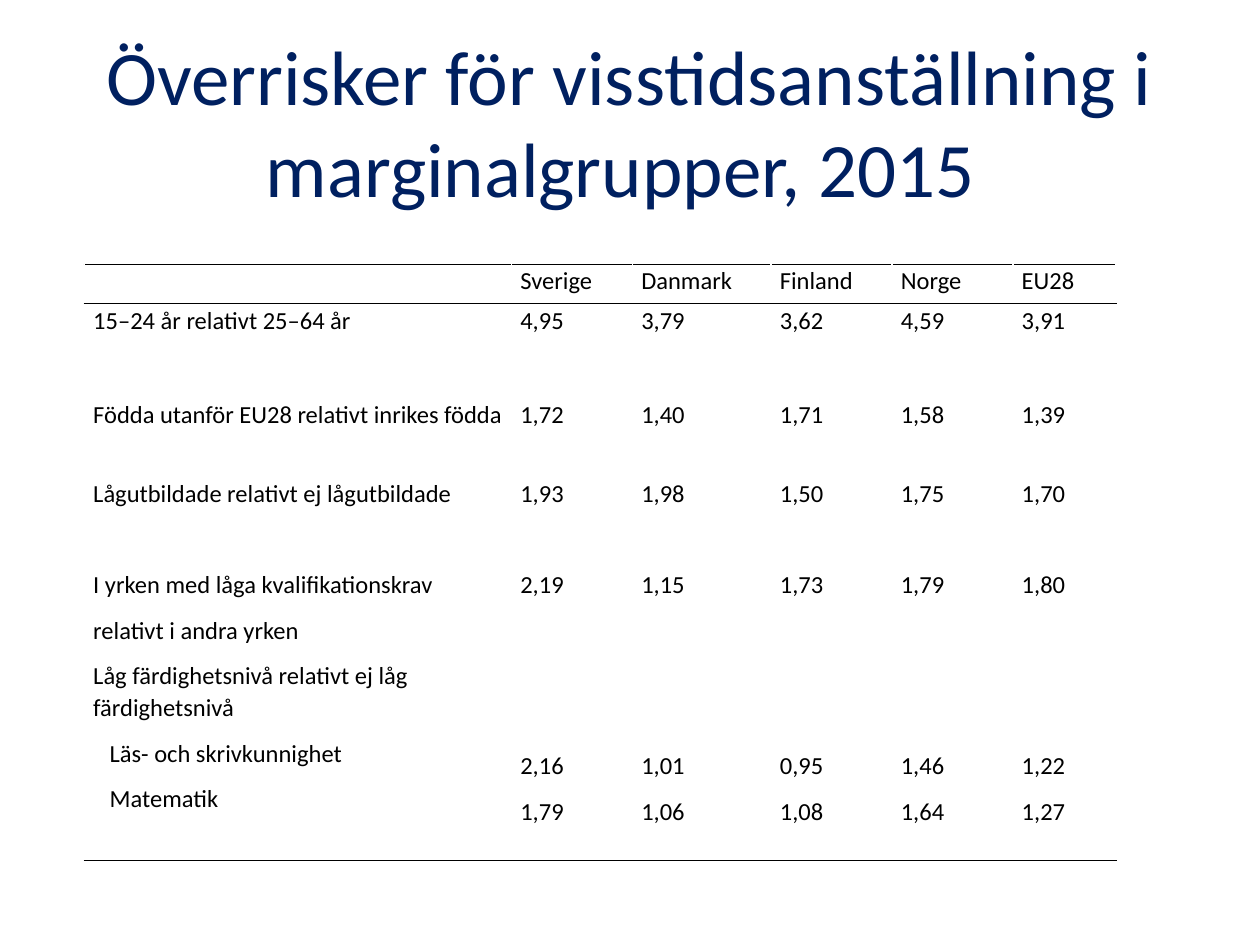
from lxml import etree
from pptx import Presentation
from pptx.dml.color import RGBColor
from pptx.enum.text import MSO_ANCHOR, PP_ALIGN
from pptx.oxml.ns import qn
from pptx.util import Inches, Pt

MIDDLE = MSO_ANCHOR.MIDDLE
CENTER = PP_ALIGN.CENTER
NAVY = RGBColor(0x00, 0x20, 0x60)
BLACK = RGBColor(0x00, 0x00, 0x00)
FONT = "Calibri"

COLUMN_WIDTHS = [3.39, 0.96, 1.1, 0.96, 0.96, 0.82]
ROW_HEIGHTS = [0.31, 0.75, 0.63, 0.72, 0.72, 1.6]
SKILL_INDENT = Inches(0.13)
SKILL_VALUES_TOP = Inches(0.72)

# Each cell is a list of paragraphs.
ROWS = [
    [[], ["Sverige"], ["Danmark"], ["Finland"], ["Norge"], ["EU28"]],
    [["15–24 år relativt 25–64 år"],
     ["4,95"], ["3,79"], ["3,62"], ["4,59"], ["3,91"]],
    [["Födda utanför EU28 relativt inrikes födda"],
     ["1,72"], ["1,40"], ["1,71"], ["1,58"], ["1,39"]],
    [["Lågutbildade relativt ej lågutbildade"],
     ["1,93"], ["1,98"], ["1,50"], ["1,75"], ["1,70"]],
    [["I yrken med låga kvalifikationskrav", "relativt i andra yrken"],
     ["2,19"], ["1,15"], ["1,73"], ["1,79"], ["1,80"]],
    [["Låg färdighetsnivå relativt ej låg färdighetsnivå",
      "Läs- och skrivkunnighet", "Matematik"],
     ["2,16", "1,79"], ["1,01", "1,06"], ["0,95", "1,08"],
     ["1,46", "1,64"], ["1,22", "1,27"]],
]
LAST_ROW = len(ROWS) - 1
BORDERS = {0: ["a:lnT", "a:lnB"], 1: ["a:lnT"], LAST_ROW: ["a:lnB"]}


def add_run(paragraph, text, size, color):
    run = paragraph.add_run()
    run.text = text
    run.font.name = FONT
    run.font.size = Pt(size)
    run.font.color.rgb = color


def add_border(cell, side):
    """Draw a black 1 pt line on one side; call before the cell's fill is set."""
    line = etree.SubElement(cell._tc.get_or_add_tcPr(), qn(side), w=str(Pt(1)))
    fill = etree.SubElement(line, qn("a:solidFill"))
    etree.SubElement(fill, qn("a:srgbClr"), val=str(BLACK))


presentation = Presentation()
presentation.slide_width = Inches(10)
presentation.slide_height = Inches(7.5)
slide = presentation.slides.add_slide(presentation.slide_layouts[6])

title = slide.shapes.add_textbox(Inches(0.5), Inches(0.21), Inches(8.99), Inches(1.5))
title_frame = title.text_frame
title_frame.word_wrap = True
title_frame.vertical_anchor = MIDDLE
title_paragraph = title_frame.paragraphs[0]
title_paragraph.alignment = CENTER
add_run(title_paragraph, "Överrisker för visstidsanställning i marginalgrupper, 2015 ", 44, NAVY)

table = slide.shapes.add_table(
    len(ROWS), len(COLUMN_WIDTHS), Inches(0.67), Inches(2.1),
    Inches(sum(COLUMN_WIDTHS)), Inches(sum(ROW_HEIGHTS))).table
table.first_row = False
table.horz_banding = False
for column, width in zip(table.columns, COLUMN_WIDTHS):
    column.width = Inches(width)
for row, height in zip(table.rows, ROW_HEIGHTS):
    row.height = Inches(height)

for row_index, row_texts in enumerate(ROWS):
    for column_index, lines in enumerate(row_texts):
        cell = table.cell(row_index, column_index)
        for side in BORDERS.get(row_index, []):
            add_border(cell, side)
        cell.fill.background()
        cell.margin_left = cell.margin_right = Inches(0.07)
        cell.margin_top = cell.margin_bottom = 0
        if row_index == LAST_ROW and column_index > 0:
            cell.margin_top = SKILL_VALUES_TOP
        for line_index, text in enumerate(lines):
            frame = cell.text_frame
            paragraph = frame.add_paragraph() if line_index else frame.paragraphs[0]
            paragraph.line_spacing = 1.07
            paragraph.space_after = Pt(8)
            if row_index == LAST_ROW and column_index == 0 and line_index > 0:
                paragraph._p.get_or_add_pPr().set("marL", str(SKILL_INDENT))
            add_run(paragraph, text, 14, BLACK)

presentation.save("out.pptx")
